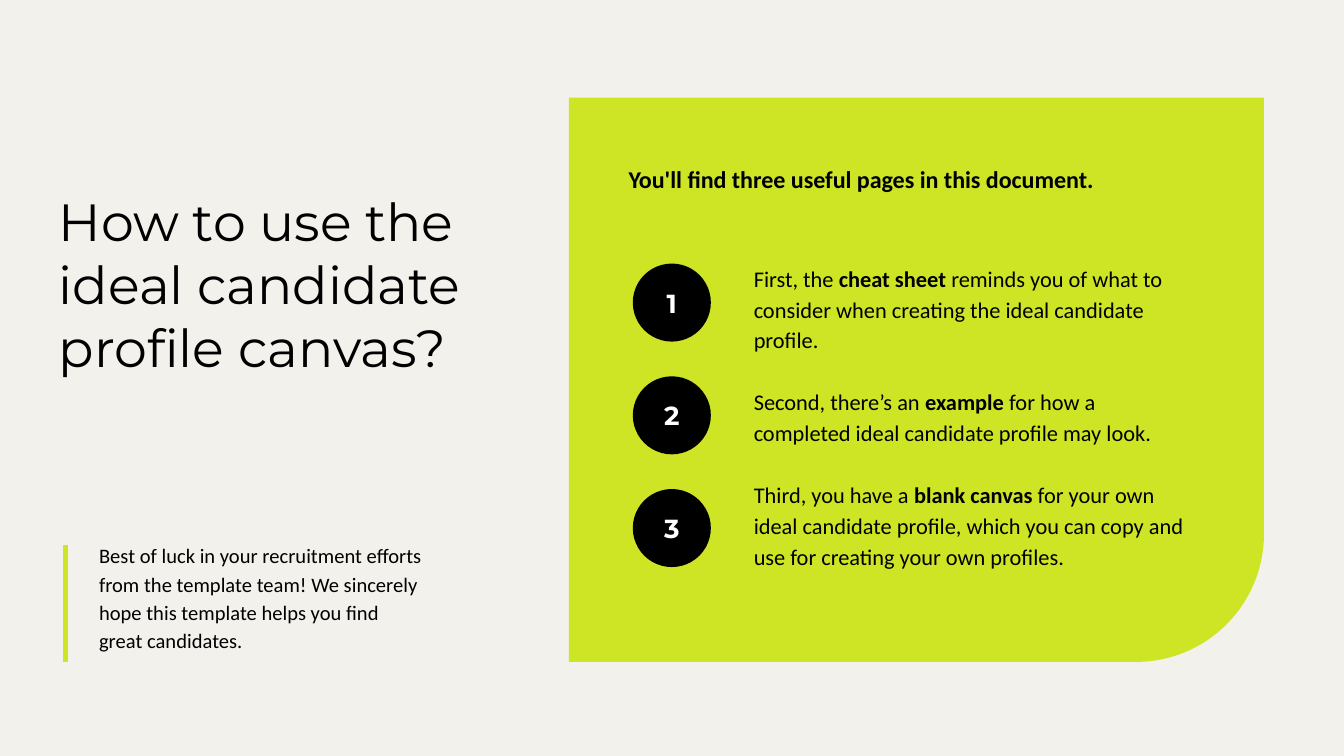
import pptx
import pptx.util
import pptx.dml.color
import pptx.enum.shapes
import pptx.enum.text
import pptx.oxml.ns
import lxml.etree

Pt = pptx.util.Pt
Kind = pptx.enum.shapes.MSO_SHAPE
Anchor = pptx.enum.text.MSO_ANCHOR
Align = pptx.enum.text.PP_ALIGN
hues = {"paper": "F2F1EB", "lime": "CEE525", "ink": "000000", "white": "FFFFFF"}


def tint(part, hue):
    part.solid()
    part.fore_color.rgb = pptx.dml.color.RGBColor.from_string(hues[hue])


def write(shape, paras, font, size, hue="ink", lead=None, gap=0, anchor=Anchor.TOP, align=Align.LEFT):
    """Fill a shape with paragraphs, each a list of (text, bold) runs."""
    frame = shape.text_frame
    frame.word_wrap = True
    frame.vertical_anchor = anchor
    for side in ("left", "right", "top", "bottom"):
        setattr(frame, "margin_" + side, Pt(7.2))
    for i, runs in enumerate(paras):
        para = frame.add_paragraph() if i else frame.paragraphs[0]
        para.alignment = align
        if lead:
            para.line_spacing = lead
        if i:
            para.space_before = Pt(gap)
        for text, bold in runs:
            run = para.add_run()
            run.text = text
            run.font.name = font
            run.font.size = Pt(size)
            run.font.bold = bold
            tint(run.font.fill, hue)


deck = pptx.Presentation()
deck.slide_width, deck.slide_height = Pt(720), Pt(405)
slide = deck.slides.add_slide(deck.slide_layouts[6])
tint(slide.background.fill, "paper")
shapes = slide.shapes

# Lime panel, mirrored so that its round corner is at the bottom right
panel = shapes.add_shape(Kind.ROUND_1_RECTANGLE, Pt(304.7), Pt(52.3), Pt(372.4), Pt(302.3))
panel.adjustments[0] = 0.227
panel.rotation = 180
panel._element.spPr.xfrm.set("flipH", "1")
panel.shadow.inherit = False
tint(panel.fill, "lime")
panel.line.fill.background()

# Title
title = shapes.add_textbox(Pt(24.5), Pt(94.3), Pt(257), Pt(143.3))
write(title, [[("How to use the ideal candidate profile canvas?", False)]], "Montserrat", 28)

# Closing wish with its lime rule
wish = shapes.add_textbox(Pt(46), Pt(262), Pt(188), Pt(95))
write(wish, [[("Best of luck in your recruitment efforts from the template team! "
               "We sincerely hope this template helps you find great candidates.", False)]],
      "Calibri", 11, lead=1.15, anchor=Anchor.BOTTOM)
rule = shapes.add_connector(pptx.enum.shapes.MSO_CONNECTOR.STRAIGHT, Pt(35.2), Pt(292.2), Pt(35.2), Pt(354.5))
tint(rule.line.fill, "lime")
rule.line.width = Pt(3)
lxml.etree.SubElement(rule._element.spPr, pptx.oxml.ns.qn("a:effectLst"))

# Panel heading
head = shapes.add_textbox(Pt(329.6), Pt(78.5), Pt(309), Pt(41.8))
write(head, [[("You'll find three useful pages in this document.", True)]], "Calibri", 12.9, lead=1.15)

# Page descriptions
steps = [
    ("First, the ", "cheat sheet",
     " reminds you of what to consider when creating the ideal candidate profile."),
    ("Second, there’s an ", "example",
     " for how a completed ideal candidate profile may look."),
    ("Third, you have a ", "blank canvas",
     " for your own ideal candidate profile, which you can copy and use for creating your own profiles."),
]
guide = shapes.add_textbox(Pt(396.7), Pt(132.5), Pt(248.4), Pt(202.3))
write(guide, [[(start, False), (name, True), (rest, False)] for start, name, rest in steps],
      "Calibri", 12, lead=1.15, gap=16.6)

# Number discs
for i in range(len(steps)):
    disc = shapes.add_shape(Kind.OVAL, Pt(339), Pt(141.2 + 60.4 * i), Pt(41.8), Pt(41.8))
    disc.shadow.inherit = False
    tint(disc.fill, "ink")
    disc.line.fill.background()
    write(disc, [[(str(i + 1), True)]], "Montserrat", 14, "white", anchor=Anchor.MIDDLE, align=Align.CENTER)

deck.save("out.pptx")
